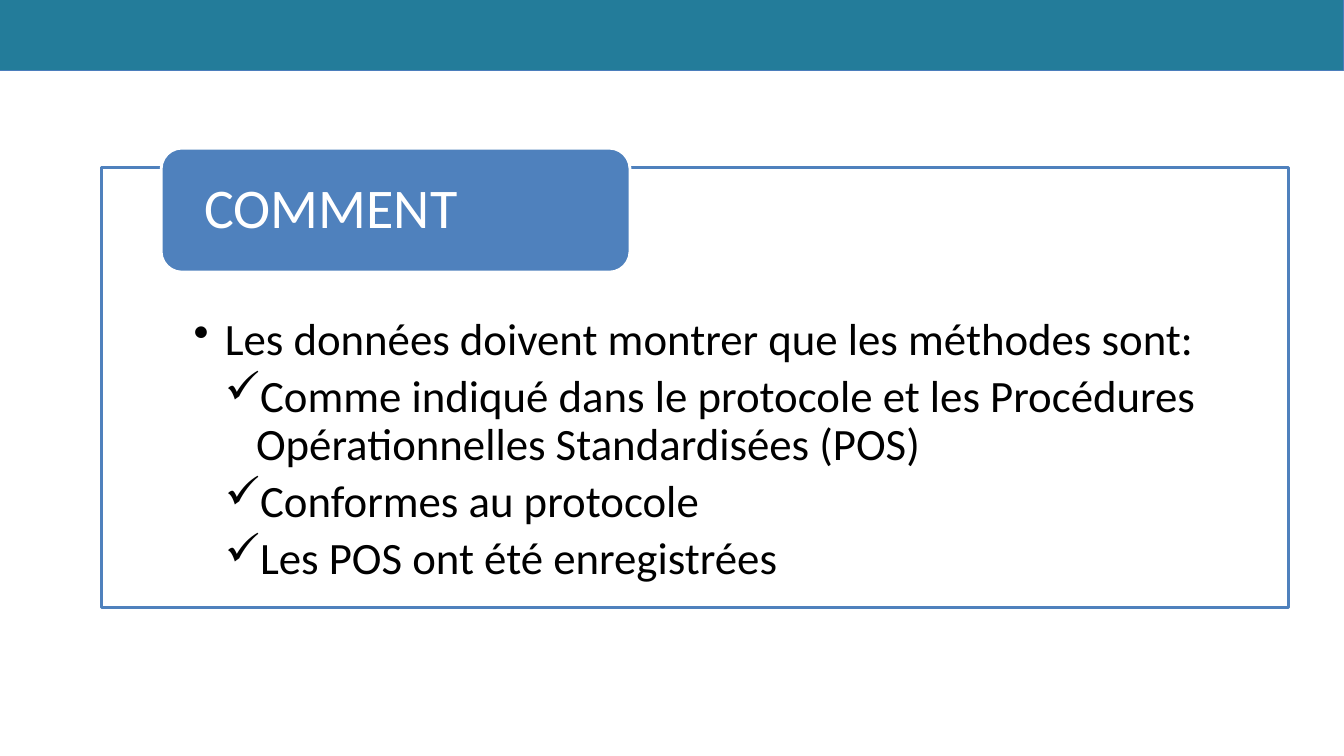
import dataclasses
import pptx
import pptx.util
import pptx.dml.color
import pptx.enum.shapes
import pptx.enum.text
import pptx.oxml.ns
import lxml.etree

Inches, Pt = pptx.util.Inches, pptx.util.Pt
MSO = pptx.enum.shapes.MSO_SHAPE
ANCHOR = pptx.enum.text.MSO_ANCHOR
ALIGN = pptx.enum.text.PP_ALIGN


@dataclasses.dataclass(frozen=True)
class Theme:
    font: str = "Calibri"
    banner: str = "237C9A"
    banner_edge: str = "4B7EBC"
    accent: str = "4F81BD"
    light: str = "FFFFFF"
    dark: str = "000000"
    heading: int = 40
    body: int = 32
    indent: float = 0.31


THEME = Theme()
WIDTH, HEIGHT = 13.33, 7.5
HEADING = "COMMENT"
# Indent level, bullet and wording
POINTS = [
    (1, "•", "Les données doivent montrer que les méthodes sont:"),
    (2, "✓", "Comme indiqué dans le protocole et les Procédures Opérationnelles Standardisées (POS)"),
    (2, "✓", "Conformes au protocole"),
    (2, "✓", "Les POS ont été enregistrées"),
]


def rgb(value):
    return pptx.dml.color.RGBColor.from_string(value)


def add_box(s, kind, box, fill, line, weight):
    shape = s.shapes.add_shape(kind, *(Inches(v) for v in box))
    shape.shadow.inherit = False
    shape.fill.solid()
    shape.fill.fore_color.rgb = rgb(fill)
    shape.line.color.rgb = rgb(line)
    shape.line.width = Pt(weight)
    return shape


def set_frame(shape, anchor, left, top, right, bottom):
    tf = shape.text_frame
    settings = {
        "word_wrap": True, "vertical_anchor": anchor,
        "margin_left": Inches(left), "margin_top": Inches(top),
        "margin_right": Inches(right), "margin_bottom": Inches(bottom),
    }
    for name, value in settings.items():
        setattr(tf, name, value)
    return tf


def write(p, text, size, color):
    p.alignment = ALIGN.LEFT
    p.line_spacing = 0.9
    r = p.add_run()
    r.text = text
    for name, value in {"name": THEME.font, "size": Pt(size)}.items():
        setattr(r.font, name, value)
    r.font.color.rgb = rgb(color)


def set_bullet(p, level, char):
    pPr = p._p.get_or_add_pPr()
    pPr.set("marL", str(Inches(THEME.indent * level)))
    pPr.set("indent", str(-Inches(THEME.indent)))
    bullet = lxml.etree.SubElement(pPr, pptx.oxml.ns.qn("a:buChar"))
    bullet.set("char", char)


def add_banner(s, box):
    add_box(s, MSO.RECTANGLE, box, THEME.banner, THEME.banner_edge, 0.75)


def add_panel(s, box):
    left, top, width, height = box

    # Outlined panel with the list
    panel = add_box(s, MSO.RECTANGLE, box, THEME.light, THEME.accent, 2)
    tf = set_frame(panel, ANCHOR.TOP, 0.91, 1.48, 0.91, 0.25)
    for i, (level, char, text) in enumerate(POINTS):
        p = tf.add_paragraph() if i else tf.paragraphs[0]
        set_bullet(p, level, char)
        p.space_after = Pt(6)
        write(p, text, THEME.body, THEME.dark)

    # Heading tab across the top edge
    tab_box = (left + width * 0.05, top - 0.19, 4.65, 1.23)
    tab = add_box(s, MSO.ROUNDED_RECTANGLE, tab_box, THEME.accent, THEME.light, 2)
    tf = set_frame(tab, ANCHOR.MIDDLE, 0.37, 0.06, 0.37, 0.06)
    write(tf.paragraphs[0], HEADING, THEME.heading, THEME.light)


def main():
    prs = pptx.Presentation()
    prs.slide_width, prs.slide_height = Inches(WIDTH), Inches(HEIGHT)
    s = prs.slides.add_slide(prs.slide_layouts[6])
    add_banner(s, (0, 0, WIDTH, 0.7))
    add_panel(s, (1.01, 1.66, 11.77, 4.37))
    prs.save("out.pptx")


if __name__ == "__main__":
    main()
